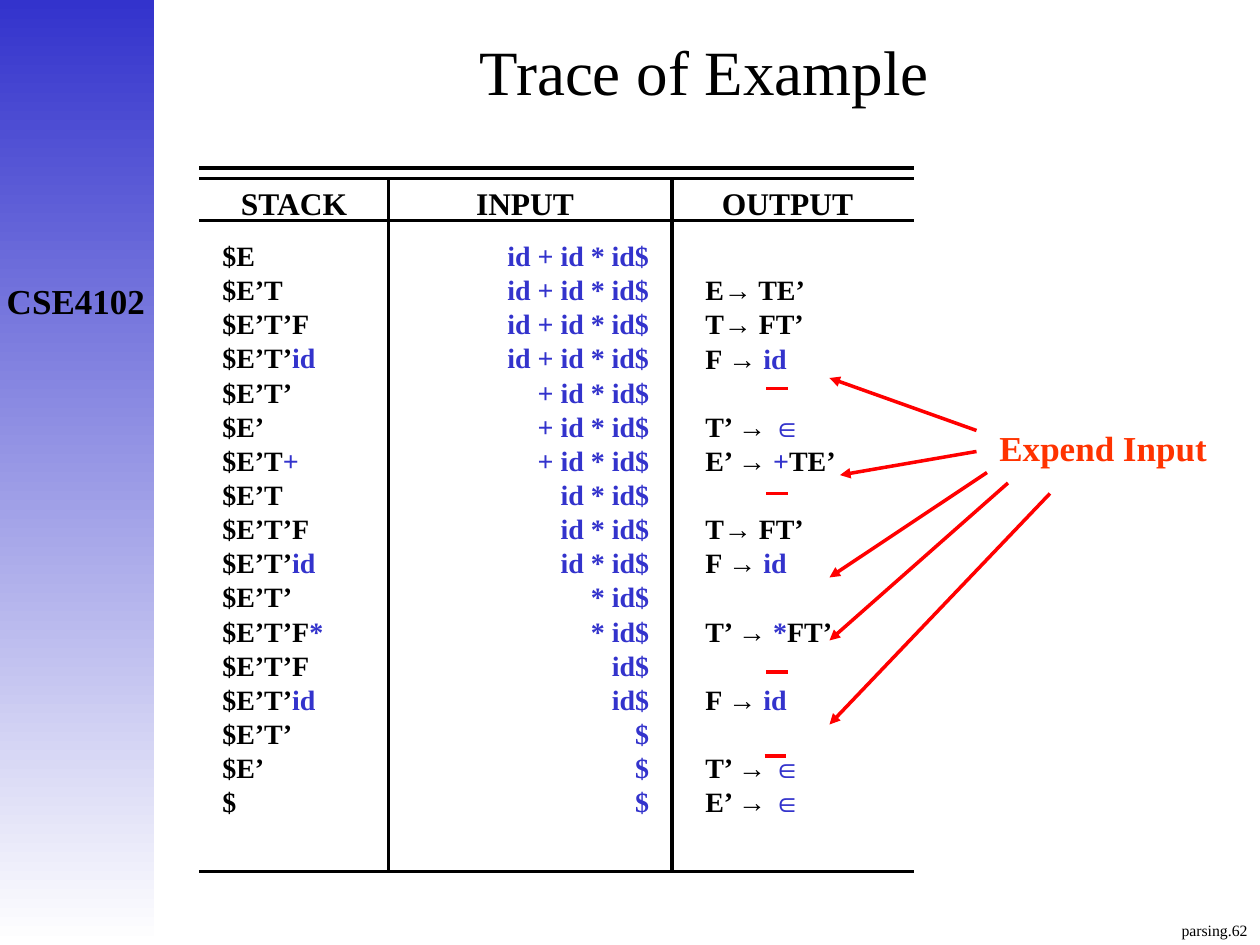
from lxml.etree import SubElement
from pptx import Presentation
from pptx.dml.color import RGBColor
from pptx.enum.shapes import MSO_CONNECTOR, MSO_SHAPE
from pptx.enum.text import MSO_ANCHOR, PP_ALIGN
from pptx.oxml.ns import qn
from pptx.util import Pt

FONT = "Times New Roman"
BLACK, BLUE, RED = "000000", "3333CC", "FF0000"
PITCH, INSET = 19.5, 3.6
LEFT, MID, RIGHT = PP_ALIGN.LEFT, PP_ALIGN.CENTER, PP_ALIGN.RIGHT

ROWS = [
    ("$E", "id + id * id$", ""),
    ("$E’T", "id + id * id$", "E→ TE’"),
    ("$E’T’F", "id + id * id$", "T→ FT’"),
    ("$E’T’|id", "id + id * id$", "F → |id"),
    ("$E’T’", "+ id * id$", ""),
    ("$E’", "+ id * id$", "T’ → |∈"),
    ("$E’T|+", "+ id * id$", "E’ → |+|TE’"),
    ("$E’T", "id * id$", ""),
    ("$E’T’F", "id * id$", "T→ FT’"),
    ("$E’T’|id", "id * id$", "F → |id"),
    ("$E’T’", "* id$", ""),
    ("$E’T’F|*", "* id$", "T’ → |*|FT’"),
    ("$E’T’F", "id$", ""),
    ("$E’T’|id", "id$", "F → |id"),
    ("$E’T’", "$", ""),
    ("$E’", "$", "T’ → |∈"),
    ("$", "$", "E’ → |∈"),
]


def hue(code):
    return RGBColor.from_string(code)


def style(para, size, color=BLACK, bold=False, align=LEFT):
    font = para.font
    font.name, font.size, font.bold = FONT, Pt(size), bold
    font.color.rgb = hue(color)
    para.alignment = align


def frame(slide, x, y, w, h):
    body = slide.shapes.add_textbox(Pt(x), Pt(y), Pt(w), Pt(h)).text_frame
    body.word_wrap = True
    body.margin_top = Pt(INSET)
    return body


def label(slide, text, x, y, w, h, size, **look):
    body = frame(slide, x, y, w, h)
    para = body.paragraphs[0]
    para.text = text
    style(para, size, **look)
    return body


def rule(slide, x1, y1, x2, y2, color=BLACK, arrow=False):
    line = slide.shapes.add_connector(
        MSO_CONNECTOR.STRAIGHT, Pt(x1), Pt(y1), Pt(x2), Pt(y2))
    line.line.color.rgb = hue(color)
    line.line.width = Pt(2)
    props = line._element.spPr
    if arrow:
        SubElement(props.find(qn("a:ln")), qn("a:tailEnd"), type="triangle")
    SubElement(props, qn("a:effectLst"))


def sidebar(slide, x, y, w, h):
    bar = slide.shapes.add_shape(
        MSO_SHAPE.RECTANGLE, Pt(x), Pt(y), Pt(w), Pt(h))
    bar.shadow.inherit = False
    bar.line.fill.background()
    bar.fill.gradient()
    bar.fill.gradient_angle = 270
    for stop, color in zip(bar.fill.gradient_stops, (BLUE, "FFFFFF")):
        stop.color.rgb = hue(color)
    body = label(slide, "CSE4102", x - 3.8, y + 156, w + 6.4, 32, 20,
                 bold=True, align=MID)
    body.word_wrap = False


def heading(slide, x, y, w, h):
    title = slide.shapes.title
    title.left, title.top, title.width, title.height = map(Pt, (x, y, w, h))
    body = title.text_frame
    body.text = "Trace of Example"
    body.vertical_anchor = MSO_ANCHOR.MIDDLE
    para = body.paragraphs[0]
    style(para, 36, align=MID)
    para.line_spacing = 0.8


def column(slide, cells, x, y, w, h, color=BLACK, align=LEFT):
    body = frame(slide, x, y, w, h)
    para, gap = None, 0
    for cell in cells:
        if not cell:
            gap += PITCH
            continue
        if para is None:
            para = body.paragraphs[0]
            body.margin_top = Pt(INSET + gap)
        else:
            para = body.add_paragraph()
            para.space_before = Pt(gap)
        gap = 0
        style(para, 16, color, True, align)
        para.line_spacing = Pt(PITCH)
        for turn, part in enumerate(cell.split("|")):
            run = para.add_run()
            run.text = part
            if turn % 2:
                run.font.color.rgb = hue(BLUE)


def trace(slide, x, y, w, h):
    for dy in (0, 6, 30, h):
        rule(slide, x, y + dy, x + w, y + dy)
    for dx in (270, 108):
        rule(slide, x + dx, y + 6, x + dx, y + h)
    stack, feed, output = zip(*ROWS)
    column(slide, stack, x + 6, y + 36.5, 90, 364)
    column(slide, feed, x + 120, y + 36.5, 144, 364, BLUE, RIGHT)
    column(slide, output, x + 282, y + 36.5, 120, 364)
    for text, dx in (("STACK", 6), ("INPUT", 138), ("OUTPUT", 288)):
        label(slide, text, x + dx, y + 5.5, 96, 29, 18, bold=True, align=MID)
    for dx, dy in ((324, 186), (324, 288), (324, 126), (323, 336)):
        rule(slide, x + dx, y + dy, x + dx + 12, y + dy, RED)


def callout(slide, x, y, w, h):
    label(slide, "Expend Input", x + 90, y + 24, w - 90, 31, 20,
          color="FF3300", bold=True)
    for x1, y1, x2, y2 in (
        (102, 60, 0, 150),
        (126, 66, 0, h),
        (84, 30, 0, 0),
        (84, 42, 6, 55.5),
        (90, 54, 0, 114),
    ):
        rule(slide, x + x1, y + y1, x + x2, y + y2, RED, True)


def main():
    deck = Presentation()
    deck.slide_width, deck.slide_height = Pt(720), Pt(540)
    slide = deck.slides.add_slide(deck.slide_layouts[5])
    sidebar(slide, 0, 0, 88, 540)
    label(slide, "parsing.62", 637, 522.7, 83, 18, 9, align=RIGHT)
    heading(slide, 85, 0, 635, 88)
    trace(slide, 114, 96, 408, 402)
    callout(slide, 474, 216, 240, 198)
    deck.save("out.pptx")


if __name__ == "__main__":
    main()
